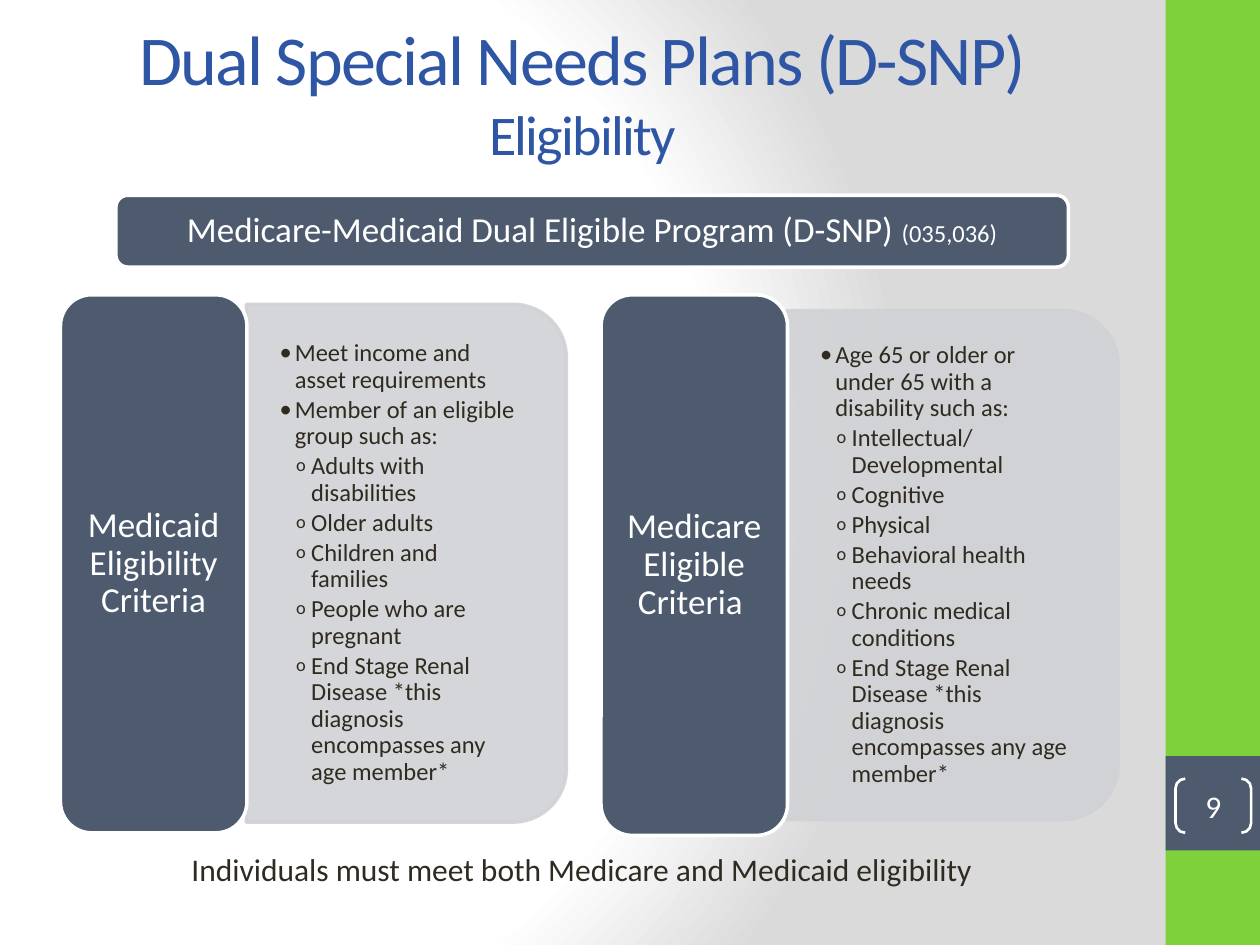
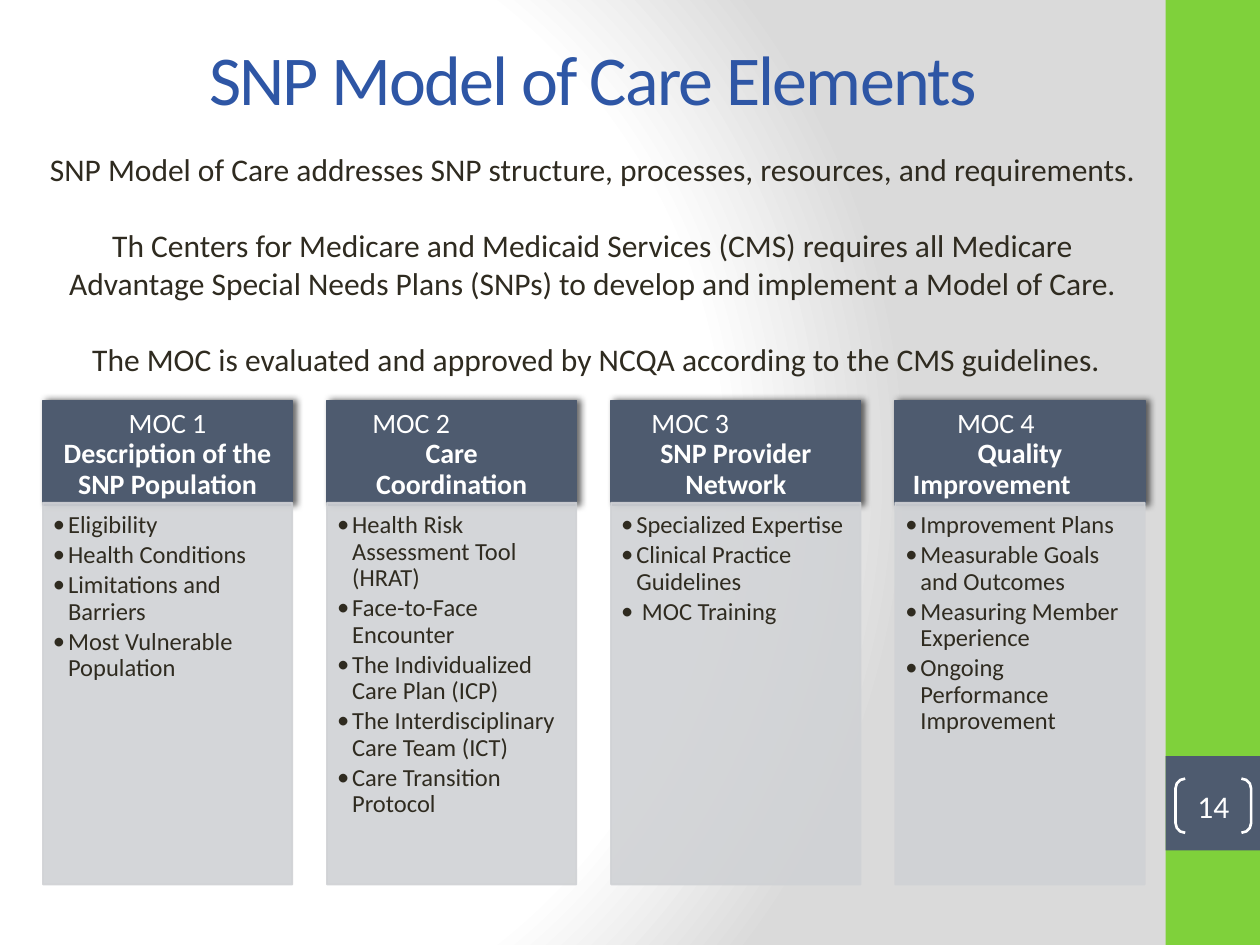
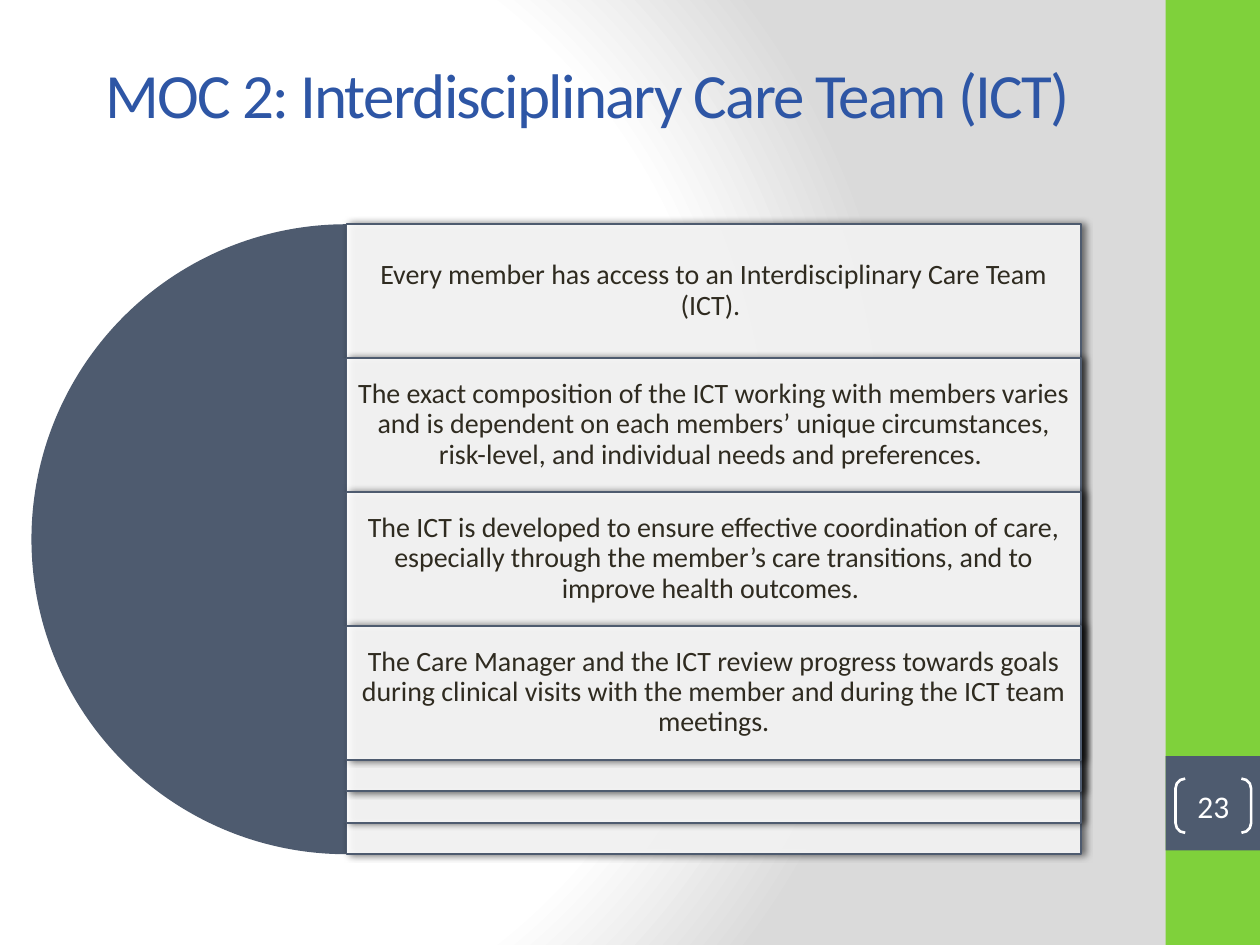
import pptx
import pptx.util
import pptx.dml.color
import pptx.enum.shapes
import pptx.enum.text
import pptx.oxml
import pptx.oxml.ns

Inches = pptx.util.Inches
Pt = pptx.util.Pt
qn = pptx.oxml.ns.qn
SHAPE = pptx.enum.shapes.MSO_SHAPE
ALIGN = pptx.enum.text.PP_ALIGN
ANCHOR = pptx.enum.text.MSO_ANCHOR

FONT = "Calibri"
WHITE, INK, BLUE = "FFFFFF", "2F2B20", "2E56A5"
SLATE, GREEN, PANEL, GREY = "4E5B6F", "7FD13B", "D0D2D5", "DADADA"

CENTERED = {"alignment": ALIGN.CENTER}
TIGHT = {"alignment": ALIGN.CENTER, "line_spacing": 0.9}
LISTED = {"alignment": ALIGN.LEFT, "line_spacing": 0.9, "space_after": Pt(2)}
BULLETS = {1: ("•", 0.12, 100), 2: ("o", 0.25, 75)}


def rgb(value):
    return pptx.dml.color.RGBColor.from_string(value)


def set_all(obj, values):
    for name, value in values.items():
        setattr(obj, name, value)


def add_xml(parent, tag, **attrs):
    child = parent.makeelement(qn(tag), attrs)
    parent.append(child)
    return child


def set_background(master):
    master.background.fill.solid()
    bg_pr = master.element.find(".//" + qn("p:bgPr"))
    bg_pr.remove(bg_pr[0])
    grad = bg_pr.makeelement(qn("a:gradFill"), {"rotWithShape": "1"})
    bg_pr.insert(0, grad)
    stops = add_xml(grad, "a:gsLst")
    for pos, color in ((0, WHITE), (75, WHITE), (100, GREY)):
        stop = add_xml(stops, "a:gs", pos=str(pos * 1000))
        add_xml(stop, "a:srgbClr", val=color)
    circle = add_xml(grad, "a:path", path="circle")
    add_xml(circle, "a:fillToRect", l="20000", t="50000", r="100000", b="50000")


def add_shape(s, kind, box, fill=None, line=None, width=1, alpha=None,
              shadow=False, adjust=()):
    sp = s.shapes.add_shape(kind, *map(Inches, box))
    sp.shadow.inherit = False
    if fill:
        sp.fill.solid()
        sp.fill.fore_color.rgb = rgb(fill)
    else:
        sp.fill.background()
    if line:
        sp.line.color.rgb = rgb(line)
        sp.line.width = Pt(width)
    else:
        sp.line.fill.background()
    for i, value in enumerate(adjust):
        sp.adjustments[i] = value
    sp_pr = sp.element.spPr
    if alpha:
        for color in sp_pr.iter(qn("a:srgbClr")):
            if color.get("val") == fill:
                add_xml(color, "a:alpha", val=str(alpha * 1000))
    if shadow:
        outer = add_xml(sp_pr.find(qn("a:effectLst")), "a:outerShdw",
                        blurRad=str(Pt(4)), dist=str(Pt(2)), dir="0", rotWithShape="0")
        add_xml(add_xml(outer, "a:srgbClr", val="000000"), "a:alpha", val="60000")
    return sp


def set_frame(sp, insets=(0.1, 0.05, 0.1, 0.05), anchor=ANCHOR.MIDDLE):
    tf = sp.text_frame
    tf.word_wrap = True
    tf.vertical_anchor = anchor
    sides = ("margin_left", "margin_top", "margin_right", "margin_bottom")
    set_all(tf, dict(zip(sides, map(Inches, insets))))
    return tf


def add_text_box(s, box, insets=(0.1, 0.05, 0.1, 0.05), anchor=ANCHOR.MIDDLE):
    return set_frame(s.shapes.add_textbox(*map(Inches, box)), insets, anchor)


def add_run(p, text, size, color, bold=False):
    r = p.add_run()
    r.text = text
    set_all(r.font, {"name": FONT, "size": Pt(size), "bold": bold})
    r.font.color.rgb = rgb(color)
    return r


def add_paragraph(tf, text, size, color, fmt, bold=False):
    p = tf.paragraphs[0]
    if p.runs:
        p = tf.add_paragraph()
    set_all(p, fmt)
    add_run(p, text, size, color, bold)
    return p


def indent(p, left, first=0):
    p_pr = p._p.get_or_add_pPr()
    p_pr.set("marL", str(Inches(left)))
    p_pr.set("indent", str(Inches(first)))
    return p_pr


def add_bullets(tf, items):
    for level, text in items:
        char, left, percent = BULLETS[level]
        p = add_paragraph(tf, text, 14, INK, LISTED)
        p.level = level
        p_pr = indent(p, left, -0.12)
        add_xml(p_pr, "a:buSzPct", val=str(percent * 1000))
        add_xml(p_pr, "a:buFont", typeface=FONT)
        add_xml(p_pr, "a:buChar", char=char)


def add_title(s, box, lines, fmt=CENTERED):
    p = add_text_box(s, box).paragraphs[0]
    set_all(p, fmt)
    for i, (text, size) in enumerate(lines):
        if i:
            p.add_line_break()
        r = add_run(p, text, size, BLUE)
        r._r.get_or_add_rPr().set("spc", "-100")


def add_slide(prs, number):
    s = prs.slides.add_slide(prs.slide_layouts[6])
    add_shape(s, SHAPE.RECTANGLE, (9.25, 0, 0.75, 7.5), GREEN)
    add_shape(s, SHAPE.RECTANGLE, (9.25, 6, 0.75, 0.75), SLATE)
    sp = add_shape(s, SHAPE.DOUBLE_BRACKET, (9.33, 6.18, 0.6, 0.43),
                   line=WHITE, width=1.5, adjust=(0.179,))
    add_paragraph(set_frame(sp, (0, 0, 0, 0)), str(number), 18, WHITE, CENTERED)
    return s


def add_criteria(s, label, label_box, panel_box, list_box, items):
    sp = add_shape(s, SHAPE.ROUND_2_SAME_RECTANGLE, panel_box, PANEL, PANEL, 2, 90)
    sp.rotation = 90
    add_bullets(add_text_box(s, list_box, (0.27, 0.14, 0.27, 0.14)), items)
    sp = add_shape(s, SHAPE.ROUNDED_RECTANGLE, label_box, SLATE, WHITE, 2)
    add_paragraph(set_frame(sp, (0.08, 0.04, 0.08, 0.04)), label, 20, WHITE, TIGHT)


def add_element_column(s, left, heading, items):
    sp = add_shape(s, SHAPE.RECTANGLE, (left, 3.18, 1.98, 0.83), SLATE, SLATE, shadow=True)
    tf = set_frame(sp, (0.12, 0.07, 0.12, 0.07), ANCHOR.TOP)
    for i, (text, offset) in enumerate(heading):
        p = add_paragraph(tf, text, 16, WHITE, TIGHT, bold=i > 0)
        if offset is not None:
            p.alignment = ALIGN.LEFT
            indent(p, offset)
    sp = add_shape(s, SHAPE.RECTANGLE, (left, 3.99, 1.98, 3.03), PANEL, PANEL, alpha=90)
    tf = set_frame(sp, (0.08, 0.08, 0.11, 0.12), ANCHOR.TOP)
    add_bullets(tf, [(1, item) for item in items])


def add_nested_step(s, i, text):
    top, size, center = 1.78 + 1.0625 * i, 5 - 1.3125 * i, 2.75
    add_shape(s, SHAPE.PIE, (center - size / 2, top, size, size), SLATE, adjust=(54, 162))
    add_shape(s, SHAPE.RECTANGLE, (center, top, 5.83, size), WHITE, SLATE,
              alpha=90, shadow=True)
    tf = add_text_box(s, (center, top, 5.83, 1.06), (0.07, 0.07, 0.07, 0.07))
    add_paragraph(tf, text, 16, INK, TIGHT)


def build_eligibility(prs):
    s = add_slide(prs, 9)
    add_title(s, (0.46, 0.1, 8.33, 1.25),
              [("Dual Special Needs Plans (D-SNP)", 40), ("Eligibility", 32)])
    renal = (2, "End Stage Renal Disease *this diagnosis encompasses any age member*")
    add_criteria(
        s, "Medicare Eligible Criteria ", (4.77, 2.34, 1.48, 4.29),
        (5.54, 3.17, 4.04, 2.63), (6.24, 2.59, 2.5, 3.79),
        [(1, "Age 65 or older or under 65 with a disability such as:"),
         (2, "Intellectual/ Developmental"),
         (2, "Cognitive"),
         (2, "Physical"),
         (2, "Behavioral health needs"),
         (2, "Chronic medical conditions"),
         renal])
    add_criteria(
        s, "Medicaid Eligibility Criteria", (0.48, 2.34, 1.48, 4.27),
        (1.17, 3.2, 4.11, 2.54), (1.95, 2.54, 2.42, 3.86),
        [(1, "Meet income and asset requirements"),
         (1, "Member of an eligible group such as:"),
         (2, "Adults with disabilities"),
         (2, "Older adults"),
         (2, "Children and families"),
         (2, "People who are pregnant"),
         renal])
    tf = add_text_box(s, (0.49, 6.7, 8.26, 0.4), anchor=ANCHOR.TOP)
    add_paragraph(tf, "Individuals must meet both Medicare and Medicaid eligibility",
                  18, INK, CENTERED)
    banner = add_shape(s, SHAPE.ROUNDED_RECTANGLE, (0.92, 1.55, 7.56, 0.57), SLATE, WHITE, 2)
    p = add_paragraph(set_frame(banner, (0.08, 0.08, 0.08, 0.08)),
                      "Medicare-Medicaid Dual Eligible Program (D-SNP) ", 20, WHITE, TIGHT)
    add_run(p, "(035,036)", 14, WHITE)


def build_care_elements(prs):
    s = add_slide(prs, 14)
    add_title(s, (0.54, -0.01, 8.33, 1.25), [("SNP Model of Care Elements", 40)])
    columns = [
        ([("MOC 1", None), ("Description of the SNP Population", None)],
         ["Eligibility", "Health Conditions", "Limitations and Barriers",
          "Most Vulnerable Population"]),
        ([("MOC 2", 0.24), ("Care", None), ("Coordination", None)],
         ["Health Risk Assessment Tool (HRAT)", "Face-to-Face Encounter",
          "The Individualized Care Plan (ICP)",
          "The Interdisciplinary Care Team (ICT)", "Care Transition Protocol"]),
        ([("MOC 3", 0.2), ("SNP Provider Network", None)],
         ["Specialized Expertise", "Clinical Practice Guidelines", " MOC Training"]),
        ([("MOC 4", 0.37), ("Quality", None), ("Improvement", 0.02)],
         ["Improvement Plans", "Measurable Goals and Outcomes",
          "Measuring Member Experience", "Ongoing Performance Improvement"]),
    ]
    for i, (heading, items) in enumerate(columns):
        add_element_column(s, 0.34 + 2.255 * i, heading, items)
    tf = add_text_box(s, (0.29, 1.14, 8.83, 1.92), anchor=ANCHOR.TOP)
    for text in (
            "SNP Model of Care addresses SNP structure, processes, resources, and requirements.",
            "Th Centers for Medicare and Medicaid Services (CMS) requires all Medicare "
            "Advantage Special Needs Plans (SNPs) to develop and implement a Model of Care.",
            " The MOC is evaluated and approved by NCQA according to the CMS guidelines."):
        add_paragraph(tf, text, 18, INK, {**CENTERED, "space_after": Pt(22)})
    tf.paragraphs[-1].space_after = Pt(0)


def build_care_team(prs):
    s = add_slide(prs, 23)
    steps = [
        "Every member has access to an Interdisciplinary Care Team (ICT). ",
        "The exact composition of the ICT working with members varies and is dependent on "
        "each members’ unique circumstances, risk-level, and individual needs and preferences. ",
        "The ICT is developed to ensure effective coordination of care, especially through "
        "the member’s care transitions, and to improve health outcomes. ",
        "The Care Manager and the ICT review progress towards goals during clinical visits "
        "with the member and during the ICT team meetings.",
    ]
    for i, text in enumerate(steps):
        add_nested_step(s, i, text)
    add_title(s, (0.5, 0.3, 8.33, 0.95),
              [("MOC 2: Interdisciplinary Care Team (ICT)", 36)], TIGHT)


def main():
    prs = pptx.Presentation()
    set_all(prs, {"slide_width": Inches(10), "slide_height": Inches(7.5)})
    set_background(prs.slide_master)
    build_eligibility(prs)
    build_care_elements(prs)
    build_care_team(prs)
    prs.save("out.pptx")


if __name__ == "__main__":
    main()
